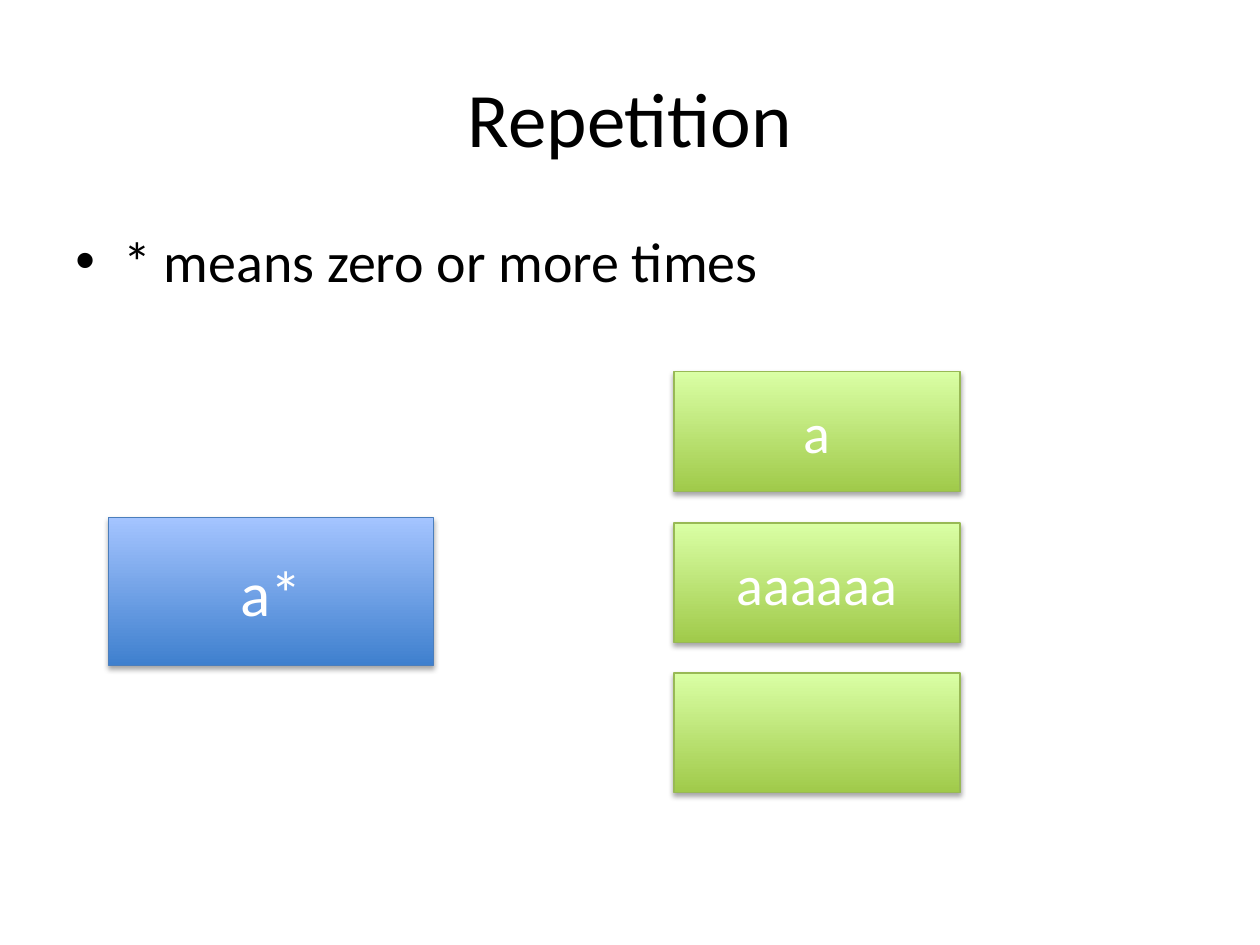
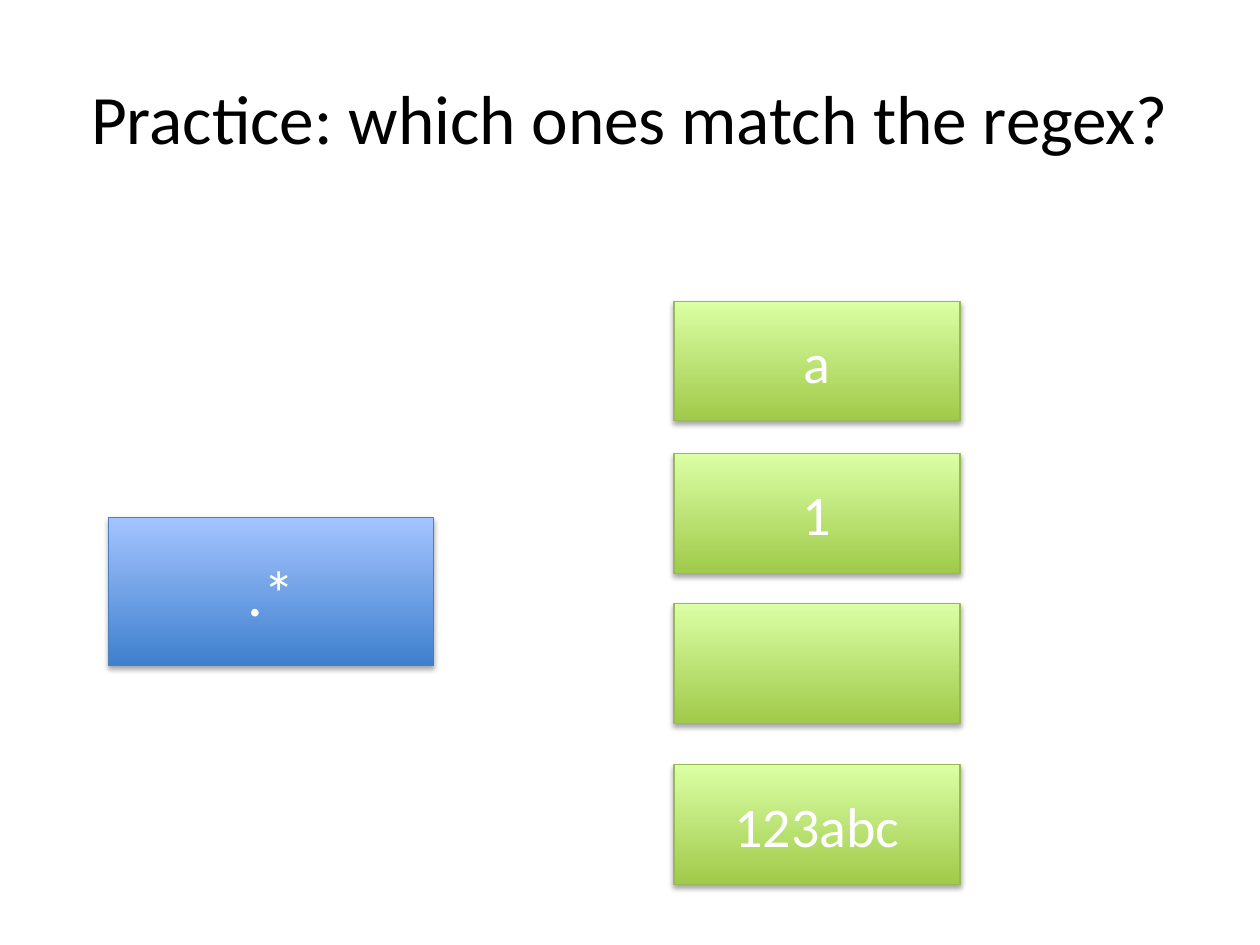
from lxml.etree import SubElement
from pptx import Presentation
from pptx.dml.color import RGBColor
from pptx.enum.shapes import MSO_SHAPE
from pptx.enum.text import MSO_ANCHOR, MSO_AUTO_SIZE, PP_ALIGN
from pptx.oxml.ns import qn
from pptx.util import Inches, Pt

FONT = "Calibri"
BLACK = RGBColor(0x00, 0x00, 0x00)
WHITE = RGBColor(0xFF, 0xFF, 0xFF)
# Each palette: bottom colour, top colour, outline
BLUE = (RGBColor(0x3F, 0x80, 0xCE), RGBColor(0xA4, 0xC4, 0xFF), RGBColor(0x4B, 0x7E, 0xBC))
GREEN = (RGBColor(0xA0, 0xCA, 0x4A), RGBColor(0xDA, 0xFF, 0xA5), RGBColor(0x98, 0xB9, 0x55))
TITLE_ONLY = 5


class RegexDeck:
    def __init__(self):
        self.presentation = Presentation()
        self.presentation.slide_width = Inches(10)
        self.presentation.slide_height = Inches(7.5)
        self.slide = None

    def set_text(self, frame, text, size, color, align):
        frame.word_wrap = True
        frame.auto_size = MSO_AUTO_SIZE.NONE
        paragraph = frame.paragraphs[0]
        paragraph.text = text
        paragraph.alignment = align
        paragraph.font.name = FONT
        paragraph.font.size = Pt(size)
        paragraph.font.color.rgb = color
        return paragraph

    def add_slide(self, title, size=44):
        layout = self.presentation.slide_layouts[TITLE_ONLY]
        self.slide = self.presentation.slides.add_slide(layout)
        shape = self.slide.shapes.title
        shape.left, shape.top = Inches(0.5), Inches(0.3)
        shape.width, shape.height = Inches(9), Inches(1.25)
        shape.text_frame.vertical_anchor = MSO_ANCHOR.MIDDLE
        self.set_text(shape.text_frame, title, size, BLACK, PP_ALIGN.CENTER)

    def add_bullet(self, text):
        box = self.slide.shapes.add_textbox(Inches(0.5), Inches(1.75), Inches(9), Inches(4.95))
        paragraph = self.set_text(box.text_frame, text, 32, BLACK, PP_ALIGN.LEFT)
        paragraph.space_before = Pt(6.4)
        properties = paragraph._p.get_or_add_pPr()
        properties.set("marL", str(Inches(0.38)))
        properties.set("indent", str(Inches(-0.38)))
        bullet_font = SubElement(properties, qn("a:buFont"), typeface="Arial")
        bullet = SubElement(properties, qn("a:buChar"), char="•")
        # Bullets come before the default run properties
        defaults = properties.find(qn("a:defRPr"))
        if defaults is not None:
            defaults.addprevious(bullet_font)
            defaults.addprevious(bullet)

    def add_card(self, left, top, width, height, text, size, palette):
        shape = self.slide.shapes.add_shape(
            MSO_SHAPE.RECTANGLE, Inches(left), Inches(top), Inches(width), Inches(height))
        bottom_color, top_color, outline = palette
        shape.fill.gradient()
        shape.fill.gradient_angle = 90
        for stop, color in zip(shape.fill.gradient_stops, (bottom_color, top_color)):
            stop.color.rgb = color
        shape.line.color.rgb = outline
        shape.line.width = Pt(0.75)
        self.add_shadow(shape)
        if text:
            shape.text_frame.vertical_anchor = MSO_ANCHOR.MIDDLE
            self.set_text(shape.text_frame, text, size, WHITE, PP_ALIGN.CENTER)

    def add_shadow(self, shape):
        shape.shadow.inherit = False
        effects = shape._element.spPr.find(qn("a:effectLst"))
        shadow = SubElement(effects, qn("a:outerShdw"), blurRad=str(Pt(3.1)),
                            dist=str(Pt(1.8)), dir="5400000", rotWithShape="0")
        color = SubElement(shadow, qn("a:srgbClr"), val=str(BLACK))
        SubElement(color, qn("a:alpha"), val="35000")

    def add_pattern(self, text):
        self.add_card(0.86, 4.11, 2.58, 1.17, text, 36, BLUE)

    def add_candidates(self, candidates):
        """Stack the strings to test, given as (top, text) pairs."""
        for top, text in candidates:
            self.add_card(5.35, top, 2.27, 0.95, text, 32, GREEN)


def main():
    deck = RegexDeck()

    deck.add_slide("Repetition")
    deck.add_bullet("* means zero or more times")
    deck.add_pattern("a*")
    deck.add_candidates([(2.95, "a"), (4.15, "aaaaaa"), (5.34, "")])

    deck.add_slide("Practice: which ones match the regex?", size=39.6)
    deck.add_pattern(".*")
    deck.add_candidates([(2.39, "a"), (3.6, "1"), (4.79, ""), (6.07, "123abc")])

    deck.presentation.save("out.pptx")


if __name__ == "__main__":
    main()
